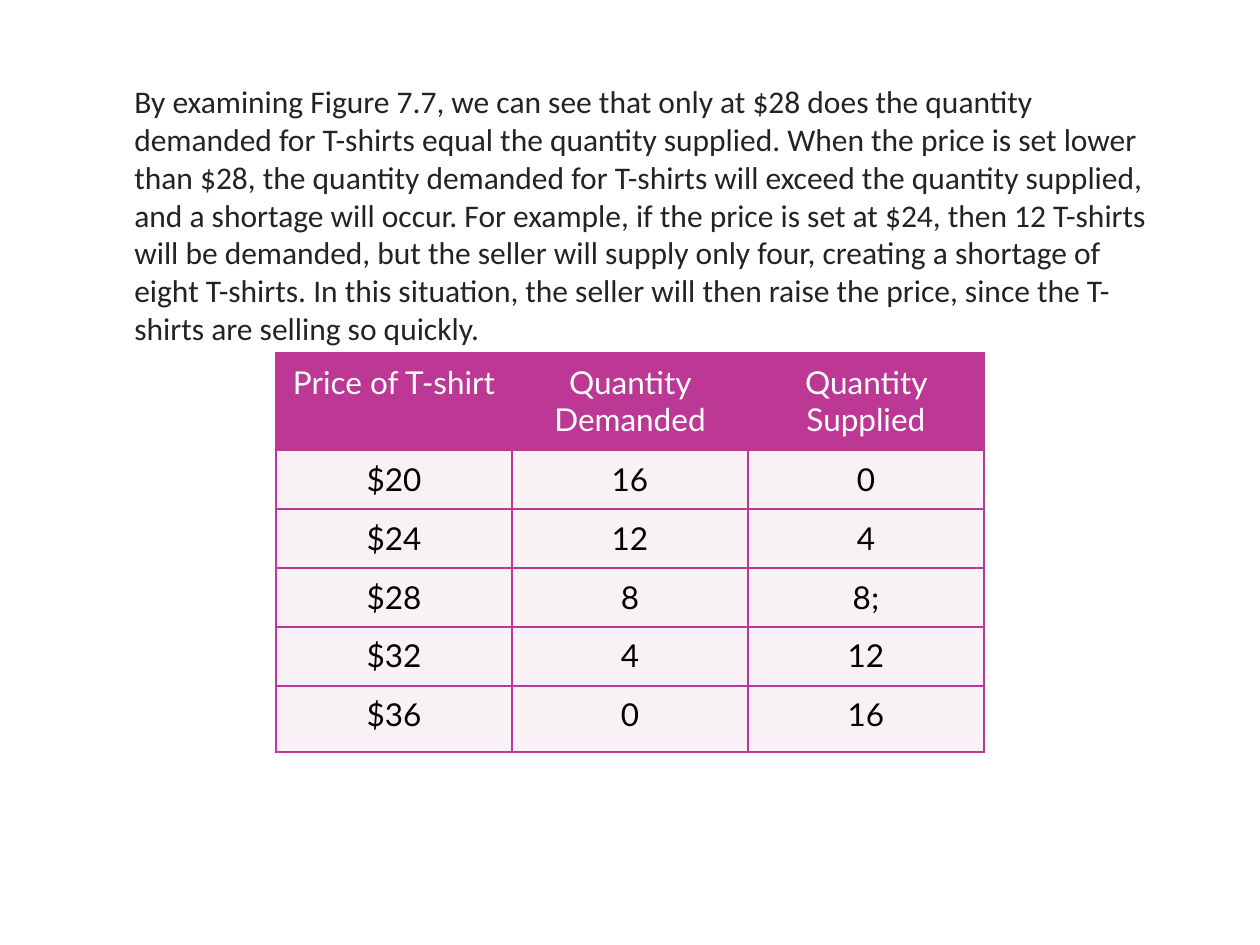
from lxml import etree
from pptx import Presentation
from pptx.dml.color import RGBColor
from pptx.enum.text import PP_ALIGN
from pptx.oxml.ns import qn
from pptx.util import Pt

CENTER, LEFT = PP_ALIGN.CENTER, PP_ALIGN.LEFT
EMU_PER_PX = 914400 / 126
MAGENTA, PALE = "BD3895", "F8F2F7"
BORDER_PT = 1.5

EXPLANATION = (
    "By examining Figure 7.7, we can see that only at $28 does the quantity "
    "demanded for T-shirts equal the quantity supplied. When the price is set "
    "lower than $28, the quantity demanded for T-shirts will exceed the quantity "
    "supplied, and a shortage will occur. For example, if the price is set at "
    "$24, then 12 T-shirts will be demanded, but the seller will supply only "
    "four, creating a shortage of eight T-shirts. In this situation, the seller "
    "will then raise the price, since the T-shirts are selling so quickly."
)
SCHEDULE = [
    ("Price of T-shirt", "Quantity Demanded", "Quantity Supplied"),
    ("$20", "16", "0"),
    ("$24", "12", "4"),
    ("$28", "8", "8;"),
    ("$32", "4", "12"),
    ("$36", "0", "16"),
]
ROW_HEIGHTS = [97, 59, 59, 59, 59, 65]
COL_WIDTH = 236


def px(n):
    return round(n * EMU_PER_PX)


def rgb(color):
    return RGBColor.from_string(color)


def write(tf, text, font="Lato", size=18, color="000000", align=LEFT):
    tf.word_wrap = True
    p = tf.paragraphs[0]
    p.alignment = align
    r = p.add_run()
    r.text = text
    r.font.name = font
    r.font.size = Pt(size)
    r.font.color.rgb = rgb(color)


def add_text(s, box, text, **fmt):
    sp = s.shapes.add_textbox(*map(px, box))
    write(sp.text_frame, text, **fmt)


def set_borders(cell, color):
    """Draw all four edges; call before filling, as lines precede fill in tcPr."""
    tcPr = cell._tc.get_or_add_tcPr()
    for edge in ("lnL", "lnR", "lnT", "lnB"):
        ln = etree.SubElement(tcPr, qn(f"a:{edge}"), w=str(Pt(BORDER_PT)))
        fill = etree.SubElement(ln, qn("a:solidFill"))
        etree.SubElement(fill, qn("a:srgbClr"), val=color)


def style_cell(cell, text, fill, color, bottom):
    cell.margin_left = cell.margin_right = px(15)
    cell.margin_top = px(10)
    cell.margin_bottom = px(bottom)
    set_borders(cell, MAGENTA)
    cell.fill.solid()
    cell.fill.fore_color.rgb = rgb(fill)
    write(cell.text_frame, text, color=color, align=CENTER)


def add_schedule(s, left, top):
    rows, cols = len(SCHEDULE), len(SCHEDULE[0])
    frame = s.shapes.add_table(rows, cols, px(left), px(top),
                               px(cols * COL_WIDTH), px(sum(ROW_HEIGHTS)))
    table = frame.table
    for col in table.columns:
        col.width = px(COL_WIDTH)
    for i, values in enumerate(SCHEDULE):
        table.rows[i].height = px(ROW_HEIGHTS[i])
        fill, color = (MAGENTA, "FFFFFF") if i == 0 else (PALE, "000000")
        bottom = 18 if i == rows - 1 else 10
        for j, text in enumerate(values):
            style_cell(table.cell(i, j), text, fill, color, bottom)


def main():
    prs = Presentation()
    prs.slide_width, prs.slide_height = px(1260), px(945)
    s = prs.slides.add_slide(prs.slide_layouts[6])
    add_text(s, (122, 76, 1058, 738), EXPLANATION, font="Calibri", color="232323")
    add_schedule(s, 276, 353)
    prs.save("out.pptx")


if __name__ == "__main__":
    main()
